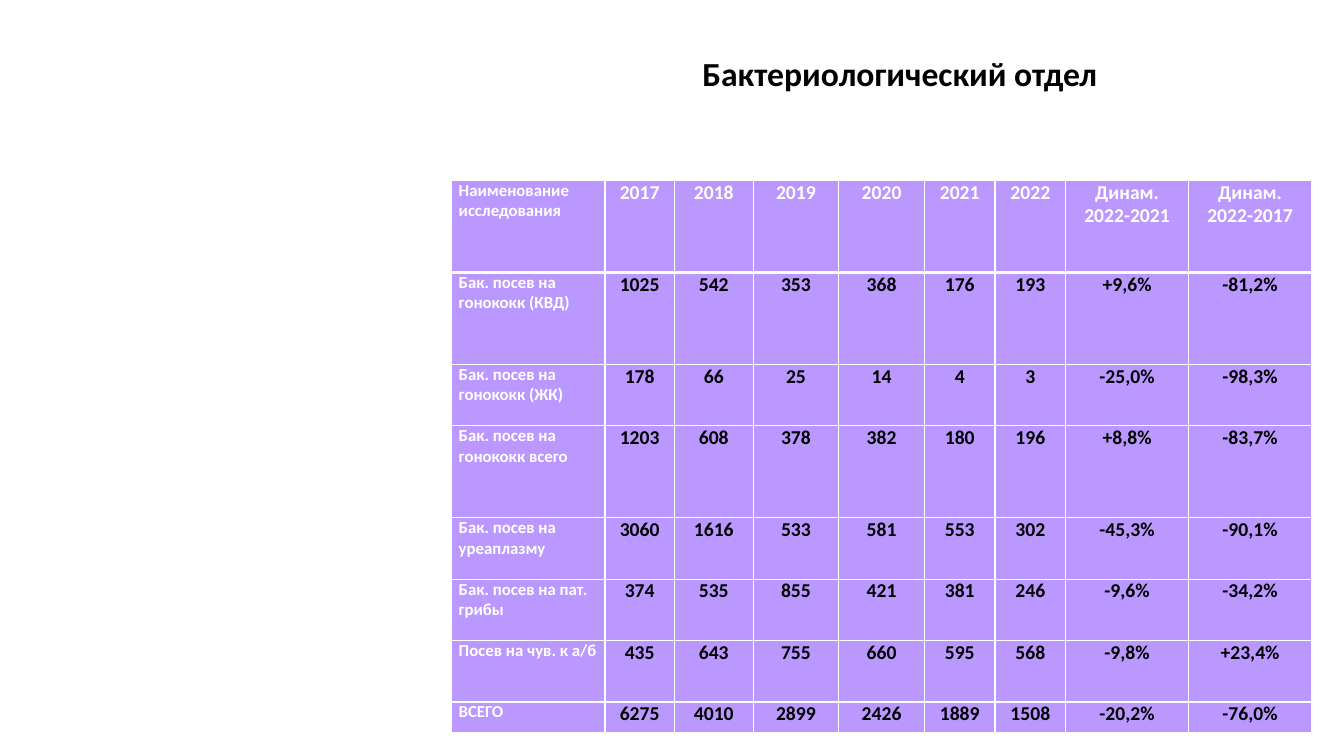
"""Build the slide with the table of bacteriology department tests."""
from lxml import etree
from pptx import Presentation, util as u
from pptx.dml.color import RGBColor
from pptx.enum import text
from pptx.oxml.ns import qn

TITLE = "Бактериологический отдел"
ROWS = [
    ("Наименование исследования", "2017", "2018", "2019", "2020", "2021", "2022",
     "Динам. 2022-2021", "Динам. 2022-2017"),
    ("Бак. посев на гонококк (КВД)", "1025", "542", "353", "368", "176", "193", "+9,6%", "-81,2%"),
    ("Бак. посев на гонококк (ЖК)", "178", "66", "25", "14", "4", "3", "-25,0%", "-98,3%"),
    ("Бак. посев на гонококк всего", "1203", "608", "378", "382", "180", "196", "+8,8%", "-83,7%"),
    ("Бак. посев на уреаплазму", "3060", "1616", "533", "581", "553", "302", "-45,3%", "-90,1%"),
    ("Бак. посев на пат. грибы", "374", "535", "855", "421", "381", "246", "-9,6%", "-34,2%"),
    ("Посев на чув. к а/б", "435", "643", "755", "660", "595", "568", "-9,8%", "+23,4%"),
    ("ВСЕГО", "6275", "4010", "2899", "2426", "1889", "1508", "-20,2%", "-76,0%"),
]
COL_WIDTHS = [1.52, 0.69, 0.78, 0.85, 0.85, 0.7, 0.7, 1.22, 1.22]
ROW_UNITS = [3, 3, 2, 3, 2, 2, 2, 1]
TABLE_LEFT, TABLE_TOP, TABLE_HEIGHT = 4.48, 1.79, 5.48
WHITE, BLACK, VIOLET = "FFFFFF", "000000", "9966FF"


def rgb(value):
    return RGBColor.from_string(value)


def write(tf, content, size, color, align=text.PP_ALIGN.CENTER, spacing=None):
    p = tf.paragraphs[0]
    p.alignment = align
    p.line_spacing = spacing
    r = p.add_run()
    r.text = content
    f = r.font
    f.name, f.size, f.bold = "Calibri", u.Pt(size), True
    f.color.rgb = rgb(color)


def border(cell, sides):
    tc_pr = cell._tc.get_or_add_tcPr()
    for i, (side, width) in enumerate(sides.items()):
        ln = etree.Element(qn(f"a:ln{side}"), w=str(u.Pt(width)))
        fill = etree.SubElement(ln, qn("a:solidFill"))
        etree.SubElement(fill, qn("a:srgbClr"), val=WHITE)
        tc_pr.insert(i, ln)


def paint(cell, color, opacity):
    cell.fill.solid()
    cell.fill.fore_color.rgb = rgb(color)
    clr = cell._tc.tcPr.find(qn("a:solidFill")).find(qn("a:srgbClr"))
    etree.SubElement(clr, qn("a:alpha"), val=str(opacity * 1000))


def add_title(s):
    sp = s.shapes.title
    sp.left, sp.top, sp.width, sp.height = map(u.Inches, (5.43, 0.4, 6.99, 0.7))
    sp.text_frame.vertical_anchor = text.MSO_ANCHOR.MIDDLE
    write(sp.text_frame, TITLE, 24, BLACK, spacing=0.9)


def add_results(s):
    box = map(u.Inches, (TABLE_LEFT, TABLE_TOP, sum(COL_WIDTHS), TABLE_HEIGHT))
    table = s.shapes.add_table(len(ROWS), len(COL_WIDTHS), *box).table
    table.horz_banding = False
    for column, width in zip(table.columns, COL_WIDTHS):
        column.width = u.Inches(width)
    for row, units in zip(table.rows, ROW_UNITS):
        row.height = u.Inches(TABLE_HEIGHT * units / sum(ROW_UNITS))
    for i, values in enumerate(ROWS):
        for j, value in enumerate(values):
            cell = table.cell(i, j)
            cell.margin_left = cell.margin_right = u.Inches(0.07)
            cell.margin_top = cell.margin_bottom = 0
            write(cell.text_frame, value,
                  size=14 if j else 12,
                  color=BLACK if i and j else WHITE,
                  align=text.PP_ALIGN.CENTER if j else text.PP_ALIGN.LEFT)
            paint(cell, VIOLET, 67)
            border(cell, {"L": 1, "R": 1, "T": 3 if i == 1 else 1, "B": 1 if i else 3})


def main():
    prs = Presentation()
    prs.slide_width, prs.slide_height = u.Inches(13.33), u.Inches(7.5)
    s = prs.slides.add_slide(prs.slide_layouts[5])
    add_title(s)
    add_results(s)
    prs.save("out.pptx")


if __name__ == "__main__":
    main()
